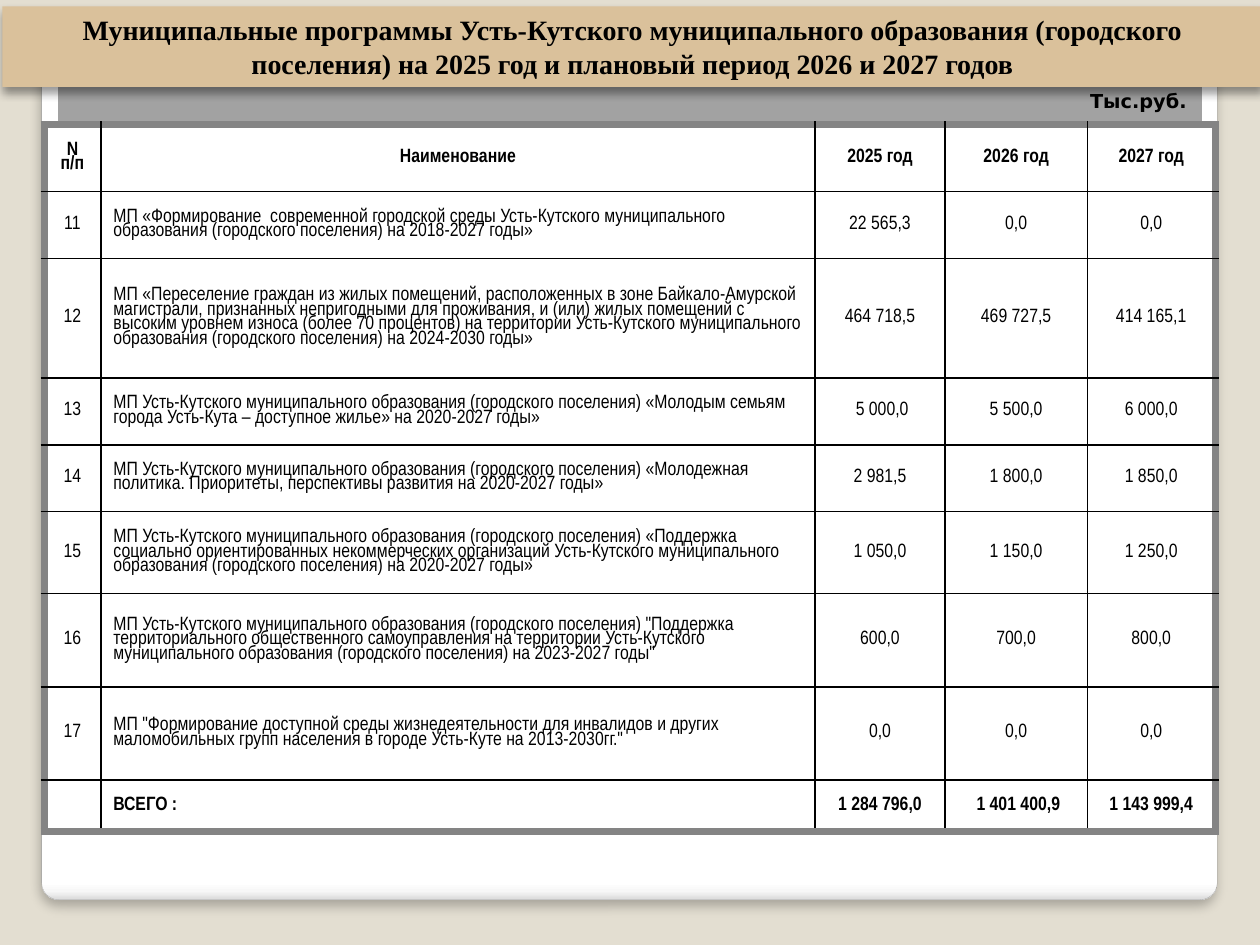
from lxml.etree import SubElement
from pptx import Presentation
from pptx.dml.color import RGBColor
from pptx.enum.shapes import MSO_SHAPE
from pptx.enum.text import MSO_ANCHOR, PP_ALIGN
from pptx.oxml.ns import qn
from pptx.util import Pt

COLORS = {
    "background": "E3DED1",
    "banner": "DAC19B",
    "panel_line": "A4A4A4",
    "frame": "848484",
    "black": "000000",
    "white": "FFFFFF",
}
PANEL_STOPS = [(0, "FFFFFF"), (98, "FFFFFF"), (99, "F7F7F7"), (100, "DADADA")]
INNER_STOPS = [(0, "FFFFFF"), (55, "E1E1E1"), (100, "A2A2A2")]

TITLE = (
    "Муниципальные программы Усть-Кутского муниципального образования "
    "(городского поселения) на 2025 год и плановый период 2026 и 2027 годов"
)
COLUMN_WIDTHS = [32.4, 408.2, 74.2, 81.4, 73]
ROW_HEIGHTS = [38.2, 38.2, 68.4, 38.2, 38.2, 46.8, 53.3, 53.3, 29.5]
ROWS = [
    ("N п/п", "Наименование", "2025 год", "2026 год", "2027 год"),
    ("11", "МП «Формирование  современной городской среды Усть-Кутского муниципального "
     "образования (городского поселения) на 2018-2027 годы»", "22 565,3", "0,0", "0,0"),
    ("12", "МП «Переселение граждан из жилых помещений, расположенных в зоне "
     "Байкало-Амурской магистрали, признанных непригодными для проживания, и (или) жилых "
     "помещений с высоким уровнем износа (более 70 процентов) на территории Усть-Кутского "
     "муниципального образования (городского поселения) на 2024-2030 годы»",
     "464 718,5", "469 727,5", "414 165,1"),
    ("13", "МП Усть-Кутского муниципального образования (городского поселения) «Молодым "
     "семьям города Усть-Кута – доступное жилье» на 2020-2027 годы»",
     " 5 000,0", "5 500,0", "6 000,0"),
    ("14", "МП Усть-Кутского муниципального образования (городского поселения) «Молодежная "
     "политика. Приоритеты, перспективы развития на 2020-2027 годы»",
     "2 981,5", "1 800,0", "1 850,0"),
    ("15", "МП Усть-Кутского муниципального образования (городского поселения) «Поддержка "
     "социально ориентированных некоммерческих организаций Усть-Кутского муниципального "
     "образования (городского поселения) на 2020-2027 годы»",
     "1 050,0", "1 150,0", "1 250,0"),
    ("16", "МП Усть-Кутского муниципального образования (городского поселения) \"Поддержка "
     "территориального общественного самоуправления на территории Усть-Кутского "
     "муниципального образования (городского поселения) на 2023-2027 годы\"",
     "600,0", "700,0", "800,0"),
    ("17", "МП \"Формирование доступной среды жизнедеятельности для инвалидов и других "
     "маломобильных групп населения в городе Усть-Куте на 2013-2030гг.\"",
     "0,0", "0,0", "0,0"),
    ("", "ВСЕГО :", "1 284 796,0", " 1 401 400,9", "1 143 999,4"),
]


def color(name):
    """Return the named colour."""
    return RGBColor.from_string(COLORS[name])


def write_text(frame, text, font, size, bold, align=PP_ALIGN.CENTER):
    """Fill a text frame with one formatted paragraph."""
    frame.text = text
    frame.word_wrap = True
    para = frame.paragraphs[0]
    para.alignment = align
    for span in para.runs:
        span.font.name = font
        span.font.size = Pt(size)
        span.font.bold = bold
        span.font.color.rgb = color("black")
    return para


def add_box(page, kind, left, top, width, height):
    """Add a preset shape without outline or shadow."""
    box = page.shapes.add_shape(kind, Pt(left), Pt(top), Pt(width), Pt(height))
    box.shadow.inherit = False
    box.line.fill.background()
    return box


def add_shadow(box, blur, distance, opacity):
    """Give a shape a soft shadow that falls downwards."""
    effects = box._element.spPr.find(qn("a:effectLst"))
    shadow = SubElement(effects, qn("a:outerShdw"), blurRad=str(Pt(blur)),
                        dist=str(Pt(distance)), dir="5400000", algn="t", rotWithShape="0")
    tint = SubElement(shadow, qn("a:srgbClr"), val=COLORS["black"])
    SubElement(tint, qn("a:alpha"), val=str(opacity * 1000))


def set_gradient(box, stops, radial):
    """Fill a shape with a vertical gradient or a radial one centred below it."""
    box.fill.background()
    old_fill = box._element.spPr.find(qn("a:noFill"))
    gradient = old_fill.makeelement(qn("a:gradFill"), {"rotWithShape": "1"})
    box._element.spPr.replace(old_fill, gradient)
    stop_list = SubElement(gradient, qn("a:gsLst"))
    for position, tone in stops:
        stop = SubElement(stop_list, qn("a:gs"), pos=str(position * 1000))
        SubElement(stop, qn("a:srgbClr"), val=tone)
    if radial:
        shade = SubElement(gradient, qn("a:path"), {"path": "circle"})
        SubElement(shade, qn("a:fillToRect"), l="50000", t="175000", r="50000", b="-75000")
    else:
        SubElement(gradient, qn("a:lin"), ang="5400000", scaled="0")


def add_panel(page, bounds, stops, radial=False):
    """Add a rounded panel with a gradient fill."""
    panel = add_box(page, MSO_SHAPE.ROUNDED_RECTANGLE, *bounds)
    panel.adjustments[0] = 0.02
    set_gradient(panel, stops, radial)
    return panel


def set_borders(cell, outer_sides):
    """Draw thin inner borders and thick frame borders around a cell."""
    properties = cell._tc.get_or_add_tcPr()
    for side in "LRTB":
        name, width = ("frame", 4.5) if side in outer_sides else ("black", 1)
        line = SubElement(properties, qn(f"a:ln{side}"), w=str(Pt(width)))
        fill = SubElement(line, qn("a:solidFill"))
        SubElement(fill, qn("a:srgbClr"), val=COLORS[name])


def add_program_table(page):
    """Add the table of programmes with its yearly amounts."""
    last_row, last_column = len(ROWS) - 1, len(COLUMN_WIDTHS) - 1
    table = page.shapes.add_table(
        len(ROWS), len(COLUMN_WIDTHS), Pt(25.2), Pt(71.3),
        Pt(sum(COLUMN_WIDTHS)), Pt(sum(ROW_HEIGHTS))).table
    table.first_row = table.horz_banding = False
    for column, width in zip(table.columns, COLUMN_WIDTHS):
        column.width = Pt(width)
    for row, height in zip(table.rows, ROW_HEIGHTS):
        row.height = Pt(height)
    for r, values in enumerate(ROWS):
        for c, text in enumerate(values):
            cell = table.cell(r, c)
            edges = {"L": c == 0, "R": c == last_column, "T": r == 0, "B": r == last_row}
            set_borders(cell, [side for side, outer in edges.items() if outer])
            cell.fill.solid()
            cell.fill.fore_color.rgb = color("white")
            cell.vertical_anchor = MSO_ANCHOR.MIDDLE
            align = PP_ALIGN.LEFT if c == 1 and r > 0 else PP_ALIGN.CENTER
            para = write_text(cell.text_frame, text, "Arial Narrow", 11,
                              r in (0, last_row), align)
            para.line_spacing = 0.8


def add_banner(page):
    """Add the title banner."""
    banner = add_box(page, MSO_SHAPE.RECTANGLE, 1.4, 3.6, 720, 46)
    banner.fill.solid()
    banner.fill.fore_color.rgb = color("banner")
    add_shadow(banner, 5.2, 3, 40)
    banner.text_frame.vertical_anchor = MSO_ANCHOR.MIDDLE
    write_text(banner.text_frame, TITLE, "Times New Roman", 16, True)


def add_unit_label(page):
    """Add the label naming the unit of the amounts."""
    label = page.shapes.add_textbox(Pt(614.9), Pt(43.2), Pt(71.3), Pt(28.8))
    label.text_frame.vertical_anchor = MSO_ANCHOR.MIDDLE
    write_text(label.text_frame, "Тыс.руб.", "DejaVu Sans", 11, True)


def main():
    """Build and save the slide."""
    deck = Presentation()
    deck.slide_width, deck.slide_height = Pt(720), Pt(540)
    page = deck.slides.add_slide(deck.slide_layouts[6])
    page.background.fill.solid()
    page.background.fill.fore_color.rgb = color("background")
    panel = add_panel(page, (23.8, 25.9, 671.8, 488.2), PANEL_STOPS)
    panel.line.color.rgb = color("panel_line")
    panel.line.width = Pt(0.16)
    add_shadow(panel, 6, 4, 25)
    add_panel(page, (33.1, 33.8, 653.8, 432), INNER_STOPS, radial=True)
    add_banner(page)
    add_program_table(page)
    add_unit_label(page)
    deck.save("out.pptx")


if __name__ == "__main__":
    main()
